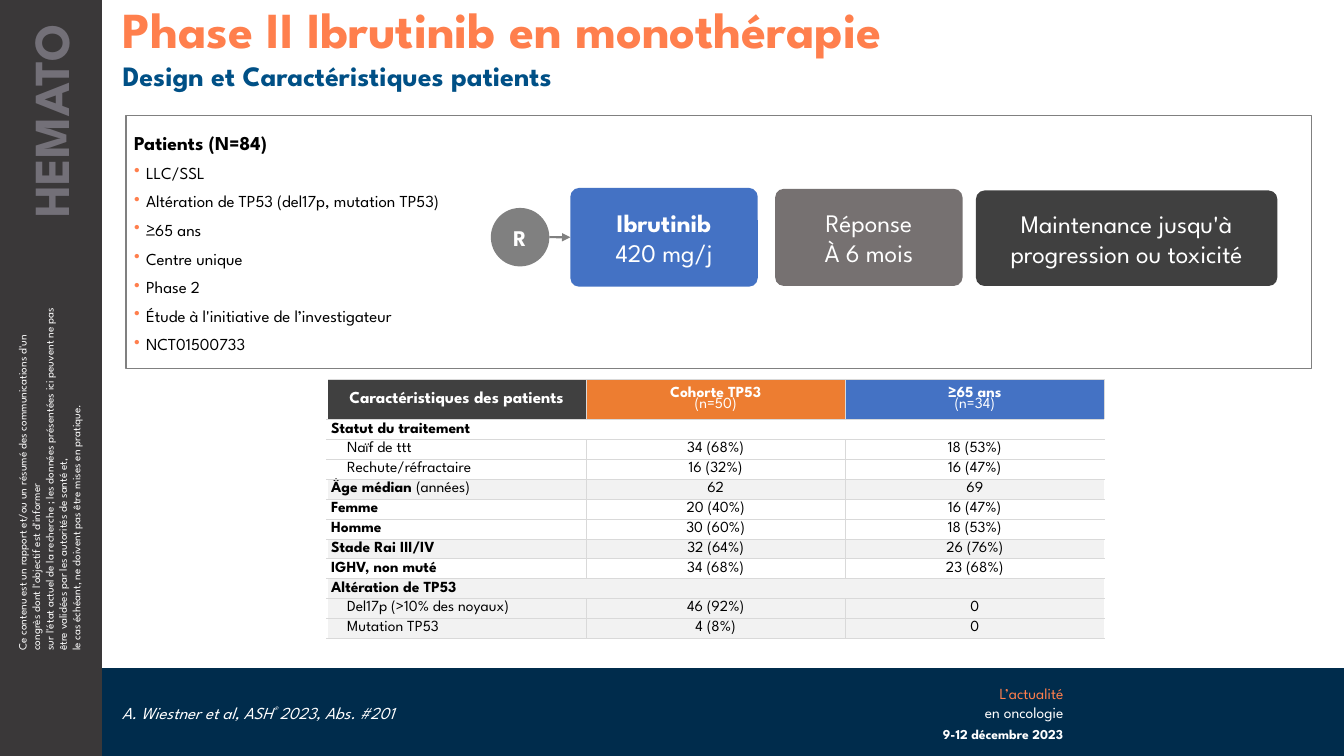
from copy import deepcopy

from lxml.etree import SubElement
from pptx import Presentation
from pptx.dml.color import RGBColor
from pptx.enum.shapes import MSO_CONNECTOR, MSO_SHAPE
from pptx.enum.text import MSO_ANCHOR, PP_ALIGN
from pptx.oxml.ns import qn
from pptx.util import Pt

NAVY = RGBColor(0x00, 0x2C, 0x4C)
CHARCOAL = RGBColor(0x3A, 0x38, 0x39)
DARK = RGBColor(0x40, 0x40, 0x40)
GRAY = RGBColor(0x80, 0x80, 0x80)
WARM_GRAY = RGBColor(0x76, 0x71, 0x71)
SECTION_GRAY = RGBColor(0x73, 0x70, 0x78)
BORDER = RGBColor(0xD9, 0xD9, 0xD9)
BAND = RGBColor(0xF2, 0xF2, 0xF2)
WHITE = RGBColor(0xFF, 0xFF, 0xFF)
BLACK = RGBColor(0x00, 0x00, 0x00)
CORAL = RGBColor(0xFF, 0x7F, 0x4D)
ORANGE = RGBColor(0xED, 0x7D, 0x31)
BLUE = RGBColor(0x44, 0x72, 0xC4)
TITLE_BLUE = RGBColor(0x00, 0x50, 0x86)

LEFT, CENTER, RIGHT = PP_ALIGN.LEFT, PP_ALIGN.CENTER, PP_ALIGN.RIGHT
BOLD = {"bold": True}


class SlideBuilder:
    font = "League Spartan"

    def __init__(self, slide):
        self.shapes = slide.shapes

    def fill_text(self, frame, paragraphs, size, color=WHITE, align=LEFT,
                  spacing=None, **style):
        """Each paragraph is a list of (text, style) runs; a final \\v breaks the line."""
        for index, runs in enumerate(paragraphs):
            paragraph = frame.paragraphs[0] if index == 0 else frame.add_paragraph()
            paragraph.alignment = align
            if spacing:
                paragraph.line_spacing = spacing
            for text, changes in runs:
                run = paragraph.add_run()
                run.text = text.rstrip("\v")
                look = {"size": size, "color": color, **style, **changes}
                run.font.name = self.font
                run.font.size = Pt(look["size"])
                run.font.color.rgb = look["color"]
                run.font.bold = look.get("bold", False)
                run.font.italic = look.get("italic", False)
                if "baseline" in look:
                    run._r.get_or_add_rPr().set("baseline", look["baseline"])
                if text.endswith("\v"):
                    paragraph.add_line_break()
                    line_break = paragraph._p.findall(qn("a:br"))[-1]
                    line_break.insert(0, deepcopy(run._r.rPr))

    def set_insets(self, frame, left, top, right, bottom):
        frame.margin_left, frame.margin_top = Pt(left), Pt(top)
        frame.margin_right, frame.margin_bottom = Pt(right), Pt(bottom)

    def text(self, box, paragraphs, size, insets=(7.2, 3.6, 7.2, 3.6),
             anchor=MSO_ANCHOR.TOP, rotation=0, **style):
        shape = self.shapes.add_textbox(*map(Pt, box))
        shape.rotation = rotation
        frame = shape.text_frame
        frame.word_wrap = True
        frame.vertical_anchor = anchor
        self.set_insets(frame, *insets)
        self.fill_text(frame, paragraphs, size, **style)
        return frame

    def shape(self, kind, box, fill=None, line=None, paragraphs=(), size=18, inset=2.88):
        shape = self.shapes.add_shape(kind, *map(Pt, box))
        shape.shadow.inherit = False
        if kind == MSO_SHAPE.ROUNDED_RECTANGLE:
            shape.adjustments[0] = 0.09
        if fill is None:
            shape.fill.background()
        else:
            shape.fill.solid()
            shape.fill.fore_color.rgb = fill
        if line is None:
            shape.line.fill.background()
        else:
            shape.line.color.rgb = line
            shape.line.width = Pt(0.75)
        if paragraphs:
            frame = shape.text_frame
            frame.word_wrap = True
            frame.vertical_anchor = MSO_ANCHOR.MIDDLE
            self.set_insets(frame, *[inset] * 4)
            self.fill_text(frame, paragraphs, size, align=CENTER)
        return shape

    def arrow(self, x, y, target):
        arrow = self.shapes.add_connector(MSO_CONNECTOR.STRAIGHT, Pt(x), Pt(y), target.left, Pt(y))
        arrow.end_connect(target, 1)
        arrow.line.color.rgb = GRAY
        arrow.line.width = Pt(1.5)
        SubElement(arrow.line._get_or_add_ln(), qn("a:tailEnd"), type="triangle")
        SubElement(arrow._element.spPr, qn("a:effectLst"))

    def table(self, x, y, column_width, row_heights):
        columns = 3
        table = self.shapes.add_table(len(row_heights), columns, Pt(x), Pt(y),
                                      Pt(column_width * columns), Pt(sum(row_heights))).table
        for column in table.columns:
            column.width = Pt(column_width)
        for row, height in zip(table.rows, row_heights):
            row.height = Pt(height)
        return table

    def cell(self, cell, paragraphs, fill, sides, size=11, indent=2.88, **style):
        cell.vertical_anchor = MSO_ANCHOR.MIDDLE
        self.set_insets(cell, indent, 0, 2.88, 0)
        properties = cell._tc.get_or_add_tcPr()
        for side in sides:
            line = SubElement(properties, qn(f"a:ln{side}"), w=str(Pt(0.75)))
            solid = SubElement(line, qn("a:solidFill"))
            SubElement(solid, qn("a:srgbClr"), val=str(BORDER))
        cell.fill.solid()
        cell.fill.fore_color.rgb = fill
        self.fill_text(cell.text_frame, paragraphs, size, spacing=0.8, **style)


def main():
    prs = Presentation()
    prs.slide_width, prs.slide_height = Pt(960), Pt(540)
    slide = SlideBuilder(prs.slides.add_slide(prs.slide_layouts[6]))

    # Footer band and side band
    slide.shape(MSO_SHAPE.RECTANGLE, (72.7, 477.3, 887.3, 62.7), NAVY)
    slide.shape(MSO_SHAPE.RECTANGLE, (0, 0, 72.7, 540), CHARCOAL)
    slide.text((-94.3, 314.6, 259.2, 55.4), [[
        ("Ce contenu est un rapport et/ou un résumé des communications d'un congrès "
         "dont l'objectif est d'informer\v", {}),
        ("sur l'état actuel de la recherche ; les données présentées ici peuvent ne pas "
         "être validées par les autorités de santé et,\v", {}),
        ("le cas échéant, ne doivent pas être mises en pratique.", {})]], 8, rotation=270)
    slide.text((-74.9, 85, 221, 51.1), [[("HEMATO", BOLD)]], 36, (7.2, 3.6, 17.28, 3.6),
               rotation=270, color=SECTION_GRAY, align=RIGHT)

    # Footer texts
    slide.text((648.7, 485.3, 118.1, 33.8),
               [[("L’actualité\v", {"color": CORAL}), ("en oncologie", {})]], 11, align=RIGHT)
    slide.text((648.7, 516.2, 110.9, 19.4), [[("9-12 décembre 2023", BOLD)]], 9.7,
               (7.2, 3.6, 0, 3.6), align=RIGHT, spacing=0.9)
    slide.text((79.9, 499.7, 406.1, 19.4), [[
        ("A. Wiestner et al, ASH", {}), ("® ", {"baseline": "30000"}),
        ("2023, Abs. #201", {})]], 12, spacing=0.9, italic=True)

    # Titles
    for top, height, title, size, color in (
            (0, 41, "Phase II Ibrutinib en monothérapie", 36, CORAL),
            (41, 26.6, "Design et Caractéristiques patients", 20, TITLE_BLUE)):
        slide.text((73.1, top, 886.6, height), [[(title, BOLD)]], size,
                   (14.4, 3.6, 7.2, 3.6), color=color, spacing=0.9)

    # Patients
    criteria = ["LLC/SSL", "Altération de TP53 (del17p, mutation TP53)", "≥65 ans",
                "Centre unique", "Phase 2", "Étude à l'initiative de l’investigateur",
                "NCT01500733"]
    heading = [("Patients (N=84)", {"size": 14, **BOLD})]
    patients = slide.text((90, 89.3, 268.6, 167.8),
                          [heading] + [[(item, {})] for item in criteria], 12,
                          (5.76,) * 4, MSO_ANCHOR.MIDDLE, color=BLACK)
    for paragraph in patients.paragraphs[1:]:
        paragraph.space_before = Pt(6)
        properties = paragraph._p.get_or_add_pPr()
        properties.set("marL", str(Pt(8.64)))
        properties.set("indent", str(-Pt(8.64)))
        bullet_color = SubElement(properties, qn("a:buClr"))
        SubElement(bullet_color, qn("a:srgbClr"), val=str(CORAL))
        SubElement(properties, qn("a:buChar"), char="•")

    # Study design
    rounded = MSO_SHAPE.ROUNDED_RECTANGLE
    slide.shape(rounded, (553.7, 134.9, 133.9, 69.4), WARM_GRAY,
                paragraphs=[[("Réponse", {})], [("À 6 mois", {})]])
    slide.shape(MSO_SHAPE.OVAL, (350.6, 148.5, 41.8, 41.8), GRAY,
                paragraphs=[[("R", BOLD)]], size=16, inset=0)
    ibrutinib = slide.shape(rounded, (407.4, 134.2, 133.9, 70.6), BLUE,
                            paragraphs=[[("Ibrutinib", BOLD)], [("420 mg/j", {})]])
    slide.shape(MSO_SHAPE.RECTANGLE, (90, 82.5, 846.9, 180.7), line=GRAY)
    slide.shape(rounded, (697.1, 136.1, 215.3, 68.2), DARK,
                paragraphs=[[("Maintenance jusqu'à progression ou toxicité", {})]])
    slide.arrow(392.4, 169.4, ibrutinib)

    # Patient characteristics: label runs, indent, fill, values
    rows = [
        ([("Statut du traitement", BOLD)], 2.88, WHITE, ()),
        ([("Naïf de ttt", {})], 14.4, WHITE, ("34 (68%)", "18 (53%)")),
        ([("Rechute/réfractaire", {})], 14.4, WHITE, ("16 (32%)", "16 (47%)")),
        ([("Âge médian ", BOLD), ("(années)", {})], 2.88, BAND, ("62", "69")),
        ([("Femme", BOLD)], 2.88, WHITE, ("20 (40%)", "16 (47%)")),
        ([("Homme", BOLD)], 2.88, WHITE, ("30 (60%)", "18 (53%)")),
        ([("Stade Rai III/IV", BOLD)], 2.88, BAND, ("32 (64%)", "26 (76%)")),
        ([("IGHV, non muté", BOLD)], 2.88, WHITE, ("34 (68%)", "23 (68%)")),
        ([("Altération de TP53", BOLD)], 2.88, BAND, ()),
        ([("Del17p (>10% des noyaux)", {})], 14.4, BAND, ("46 (92%)", "0")),
        ([("Mutation TP53", {})], 14.4, BAND, ("4 (8%)", "0")),
    ]
    table = slide.table(233.6, 271.3, 185.1, [28.5] + [14.22] * len(rows))
    slide.cell(table.cell(0, 0), [[("Caractéristiques des patients", BOLD)]], DARK, "RTB",
               size=12, align=CENTER)
    for column, (cohort, count, fill) in enumerate(
            (("Cohorte TP53", "(n=50)", ORANGE), ("≥65 ans", "(n=34)", BLUE)), 1):
        slide.cell(table.cell(0, column), [[(cohort, BOLD)], [(count, {})]], fill, "LRTB",
                   align=CENTER)
    for row, (label, indent, fill, values) in enumerate(rows, 1):
        if not values:
            table.cell(row, 0).merge(table.cell(row, 2))
        slide.cell(table.cell(row, 0), [label], fill, "RTB" if values else "TB",
                   indent=indent, color=BLACK)
        for column, value in enumerate(values, 1):
            slide.cell(table.cell(row, column), [[(value, {})]], fill,
                       "LRTB" if column == 1 else "LTB", color=BLACK, align=CENTER)

    prs.save("out.pptx")


if __name__ == "__main__":
    main()
